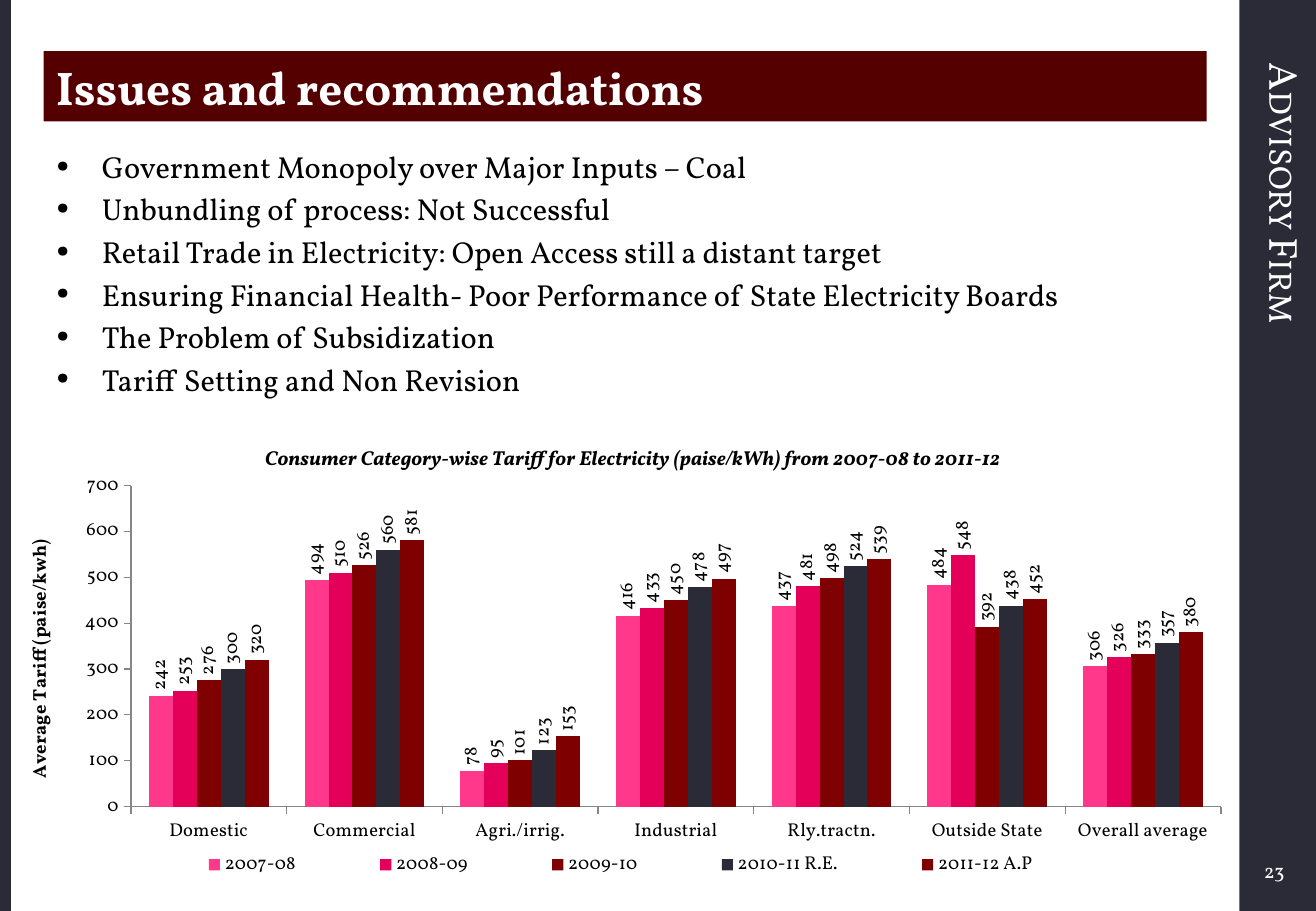
import dataclasses

import lxml.etree
import pptx
import pptx.chart.data
import pptx.dml.color
import pptx.enum.chart
import pptx.enum.shapes
import pptx.enum.text
import pptx.oxml
import pptx.oxml.ns
import pptx.util

FONT = "Vollkorn"
SLATE, MAROON, WHITE, BLACK, GREY = "2B2B37", "540000", "FFFFFF", "000000", "868686"
WIDTH, HEIGHT = pptx.util.Inches(10.83), pptx.util.Inches(7.5)
INDENT = pptx.util.Inches(0.38)


@dataclasses.dataclass(frozen=True)
class Area:
    """A rectangle in percent of the slide's width and height."""
    left: float
    top: float
    width: float
    height: float

    def box(self) -> tuple[int, int, int, int]:
        return (int(WIDTH * self.left / 100), int(HEIGHT * self.top / 100),
                int(WIDTH * self.width / 100), int(HEIGHT * self.height / 100))


@dataclasses.dataclass(frozen=True)
class Year:
    name: str
    color: str
    tariffs: tuple[int, ...]


SIDE_BARS = [Area(94.18, 0, 5.82, 100), Area(0, 0, 0.83, 100)]
HEADING = Area(3.32, 5.6, 88.37, 7.73)
ISSUES_AREA = Area(3.32, 15.6, 88.37, 32.27)
FIRM_AREA = Area(94.18, 5.6, 5.82, 85.6)
NUMBER_AREA = Area(87.72, 93.33, 10.8, 4.4)
CHART_AREA = Area(1.57, 46.67, 93.07, 51.07)

ISSUES = [
    "Government Monopoly over Major Inputs – Coal",
    "Unbundling of process: Not Successful",
    "Retail Trade in Electricity: Open Access still a distant target",
    "Ensuring Financial Health- Poor Performance of State Electricity Boards",
    "The Problem of Subsidization",
    "Tariff Setting and Non Revision",
]
CONSUMERS = ["Domestic", "Commercial", "Agri./irrig.", "Industrial", "Rly.tractn.",
             "Outside State", "Overall average"]
YEARS = [
    Year("2007-08", "FF388C", (242, 494, 78, 416, 437, 484, 306)),
    Year("2008-09", "E40059", (253, 510, 95, 433, 481, 548, 326)),
    Year("2009-10", "7F0000", (276, 526, 101, 450, 498, 392, 333)),
    Year("2010-11 R.E.", SLATE, (300, 560, 123, 478, 524, 438, 357)),
    Year("2011-12 A.P", "7F0000", (320, 581, 153, 497, 539, 452, 380)),
]


def rgb(color: str) -> pptx.dml.color.RGBColor:
    return pptx.dml.color.RGBColor.from_string(color)


def paint(fill, color: str) -> None:
    fill.solid()
    fill.fore_color.rgb = rgb(color)


def style(font, size: float, color: str = BLACK, bold: bool = False,
          italic: bool = False) -> None:
    font.name, font.size, font.bold, font.italic = FONT, pptx.util.Pt(size), bold, italic
    font.color.rgb = rgb(color)


def add_run(paragraph, text: str, size: float, color: str, bold: bool = False):
    run = paragraph.add_run()
    run.text = text
    style(run.font, size, color, bold)
    return run


def add_text_area(slide, area: Area):
    frame = slide.shapes.add_textbox(*area.box()).text_frame
    frame.word_wrap = True
    return frame


def add_side_bar(slide, area: Area) -> None:
    bar = slide.shapes.add_shape(pptx.enum.shapes.MSO_SHAPE.RECTANGLE, *area.box())
    bar.shadow.inherit = False
    paint(bar.fill, SLATE)
    bar.line.fill.background()


def add_firm_name(slide) -> None:
    frame = add_text_area(slide, FIRM_AREA)
    frame._txBody.bodyPr.set("vert", "vert")
    run = add_run(frame.paragraphs[0], "Advisory Firm", 24, WHITE)
    run._r.get_or_add_rPr().set("cap", "small")


def add_heading(slide) -> None:
    heading = slide.shapes.title
    heading.left, heading.top, heading.width, heading.height = HEADING.box()
    paint(heading.fill, MAROON)
    frame = heading.text_frame
    frame.auto_size = pptx.enum.text.MSO_AUTO_SIZE.NONE
    frame.vertical_anchor = pptx.enum.text.MSO_ANCHOR.MIDDLE
    frame.paragraphs[0].alignment = pptx.enum.text.PP_ALIGN.LEFT
    add_run(frame.paragraphs[0], "Issues and recommendations", 28, WHITE, bold=True)


def add_issues(slide) -> None:
    frame = add_text_area(slide, ISSUES_AREA)
    for index, issue in enumerate(ISSUES):
        paragraph = frame.add_paragraph() if index else frame.paragraphs[0]
        properties = paragraph._p.get_or_add_pPr()
        properties.set("marL", str(INDENT))
        properties.set("indent", str(-INDENT))
        for tag, key, value in (("a:buSzPct", "val", "140000"),
                                ("a:buFont", "typeface", FONT),
                                ("a:buChar", "char", "•")):
            lxml.etree.SubElement(properties, pptx.oxml.ns.qn(tag)).set(key, value)
        if index:
            paragraph.space_before = pptx.util.Pt(3.6)
        add_run(paragraph, issue, 18, BLACK)


def add_page_number(slide) -> None:
    frame = add_text_area(slide, NUMBER_AREA)
    frame.vertical_anchor = pptx.enum.text.MSO_ANCHOR.MIDDLE
    frame.paragraphs[0].alignment = pptx.enum.text.PP_ALIGN.RIGHT
    add_run(frame.paragraphs[0], "23", 12, WHITE)


def place(part, left: float, top: float, width: float, height: float,
          inner: bool = False) -> None:
    """Give a chart part a fixed place, in shares of the chart's size."""
    target = '<c:layoutTarget val="inner"/>' if inner else ""
    values = "".join(f'<c:{tag} val="{share}"/>' for tag, share in
                     zip("xywh", (left, top, width, height)))
    layout = pptx.oxml.parse_xml(
        f'<c:layout {pptx.oxml.ns.nsdecls("c")}><c:manualLayout>{target}'
        f'<c:xMode val="edge"/><c:yMode val="edge"/>{values}</c:manualLayout></c:layout>')
    for old in part.findall(pptx.oxml.ns.qn("c:layout")):
        part.remove(old)
    position = part.find(pptx.oxml.ns.qn("c:legendPos"))
    part.insert(0 if position is None else part.index(position) + 1, layout)


def format_axis(axis) -> None:
    axis.has_major_gridlines = False
    axis.major_tick_mark = pptx.enum.chart.XL_TICK_MARK.OUTSIDE
    axis.minor_tick_mark = pptx.enum.chart.XL_TICK_MARK.NONE
    axis.format.line.color.rgb = rgb(GREY)
    axis.format.line.width = pptx.util.Pt(0.75)
    style(axis.tick_labels.font, 11)


def add_tariff_chart(slide) -> None:
    tariffs = pptx.chart.data.CategoryChartData(number_format="0")
    tariffs.categories = CONSUMERS
    for year in YEARS:
        tariffs.add_series(year.name, year.tariffs)
    chart = slide.shapes.add_chart(pptx.enum.chart.XL_CHART_TYPE.COLUMN_CLUSTERED,
                                   *CHART_AREA.box(), tariffs).chart
    style(chart.font, 11)
    caption = chart.chart_title.text_frame.paragraphs[0].add_run()
    caption.text = ("Consumer Category-wise Tariff for Electricity (paise/kWh) "
                    "from 2007-08 to 2011-12")
    style(caption.font, 12, bold=True, italic=True)

    format_axis(chart.category_axis)
    format_axis(chart.value_axis)
    chart.value_axis.minimum_scale, chart.value_axis.maximum_scale = 0, 700
    chart.value_axis.major_unit = 100
    unit = chart.value_axis.axis_title.text_frame.paragraphs[0].add_run()
    unit.text = "Average Tariff (paise/kwh)"
    style(unit.font, 11, bold=True)

    plot = chart.plots[0]
    plot.gap_width, plot.overlap, plot.vary_by_categories = 150, 0, False
    for year, series in zip(YEARS, plot.series):
        paint(series.format.fill, year.color)
        labels = series.data_labels
        labels.show_value = True
        labels.number_format, labels.number_format_is_linked = "0", False
        labels.position = pptx.enum.chart.XL_LABEL_POSITION.OUTSIDE_END
        style(labels.font, 11)
        labels._element.find(".//" + pptx.oxml.ns.qn("a:bodyPr")).set("rot", "-5400000")

    chart.has_legend = True
    chart.legend.position = pptx.enum.chart.XL_LEGEND_POSITION.BOTTOM
    chart.legend.include_in_layout = False
    style(chart.legend.font, 11)
    place(chart.legend._element, 0.09, 0.91, 0.8, 0.07)
    place(plot._element.getparent(), 0.09, 0.13, 0.89, 0.69, inner=True)


def main() -> None:
    deck = pptx.Presentation()
    deck.slide_width, deck.slide_height = WIDTH, HEIGHT
    slide = deck.slides.add_slide(deck.slide_layouts[5])
    for area in SIDE_BARS:
        add_side_bar(slide, area)
    add_firm_name(slide)
    add_heading(slide)
    add_issues(slide)
    add_page_number(slide)
    add_tariff_chart(slide)
    deck.save("out.pptx")


if __name__ == "__main__":
    main()
